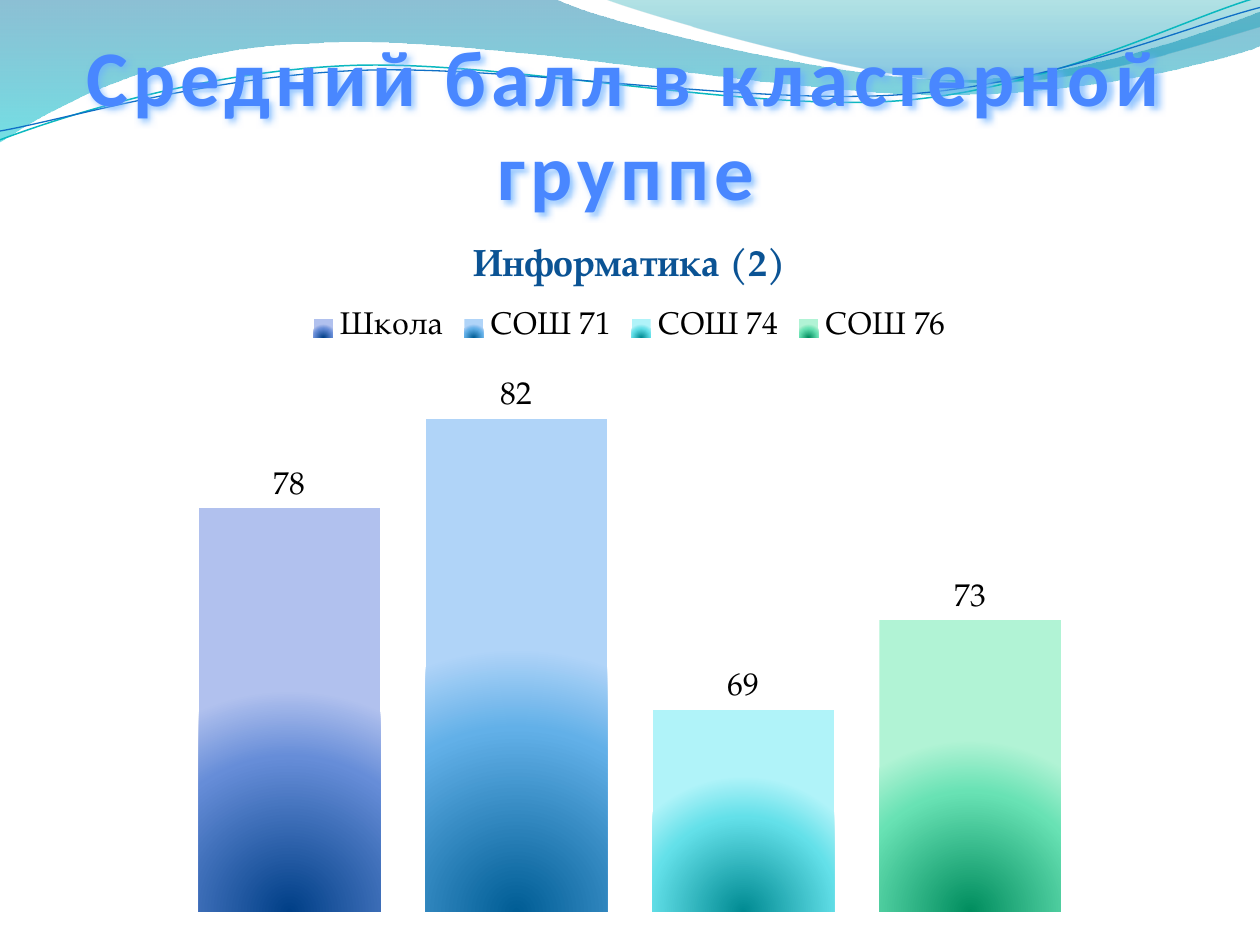
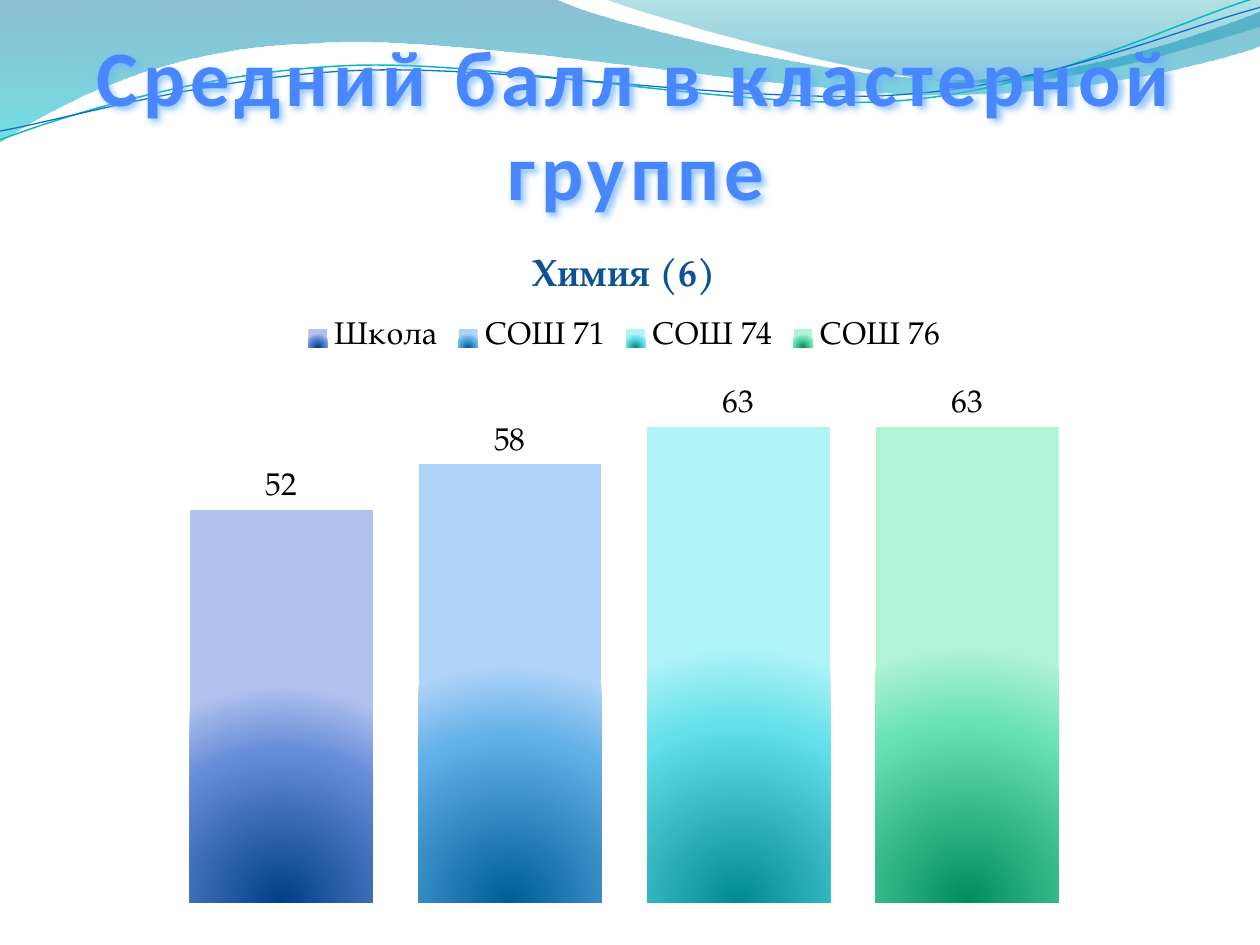
import math

from lxml import etree
from pptx import Presentation
from pptx.chart.data import CategoryChartData
from pptx.dml.color import RGBColor
from pptx.enum import chart as charts, text
from pptx.oxml import ns, parse_xml
from pptx.util import Inches, Pt

TITLE_BLUE = RGBColor(0x49, 0x87, 0xFF)
TITLE_NAVY = RGBColor(0x00, 0x53, 0x9E)
TITLE_OUTLINE = RGBColor(0xF4, 0xF5, 0xFA)
TITLE_SHADOW = RGBColor(0x6A, 0xB0, 0xFF)
CHART_TITLE = RGBColor(0x0B, 0x53, 0x94)
BLACK = RGBColor(0, 0, 0)
TEAL_LINE = RGBColor(0x0A, 0xB8, 0xBF)
BLUE_LINE = RGBColor(0x0F, 0x6F, 0xC6)
WAVE_BLUE = RGBColor(0x00, 0x74, 0xA1)
WAVE_CYAN = RGBColor(0x00, 0xC6, 0xCF)
CREST_TEAL = RGBColor(0x00, 0xA1, 0xA9)
CREST_BLUE = RGBColor(0x00, 0x8B, 0xBF)

TITLE_FONT = "Calibri"
CHART_FONT = "TeX Gyre Pagella"
TITLE = "Средний балл в кластерной группе"

SCHOOLS = {
    "Школа": (RGBColor(0x00, 0x3F, 0x87), RGBColor(0x66, 0x8D, 0xD8), RGBColor(0xB1, 0xC1, 0xEE)),
    "СОШ 71": (RGBColor(0x00, 0x5D, 0x95), RGBColor(0x62, 0xB0, 0xE8), RGBColor(0xB0, 0xD4, 0xF8)),
    "СОШ 74": (RGBColor(0x00, 0x8A, 0x92), RGBColor(0x63, 0xE0, 0xE9), RGBColor(0xB0, 0xF3, 0xF9)),
    "СОШ 76": (RGBColor(0x00, 0x8D, 0x5E), RGBColor(0x68, 0xE2, 0xB4), RGBColor(0xB1, 0xF3, 0xD5)),
}

WAVE = [
    [(0, 0)], [(4.4, -0.01)],
    [(4.76, 0.17), (6.64, 0.63), (7.58, 0.63)],
    [(8.53, 0.63), (9.58, 0.26), (10, 0.09)],
    [(10.01, 0.36)],
    [(9.83, 0.44), (8.7, 0.76), (7.46, 0.75)],
    [(6.22, 0.75), (3.82, 0.28), (2.57, 0.34)],
    [(1.29, 0.36), (0.46, 0.83), (-0.01, 1.13)],
    [(0, 0)],
]
CREST = [
    [(4.79, -0.01)],
    [(5.09, 0.11), (6.82, 0.62), (7.69, 0.65)],
    [(8.56, 0.69), (9.61, 0.32), (10, 0.21)],
    [(10, 0)],
    [(4.79, -0.01)],
]
TEAL_CURVE = [
    [(0, 1.11)],
    [(0.48, 0.93), (1.58, 0.57), (2.77, 0.52)],
    [(3.95, 0.47), (5.93, 0.89), (7.13, 0.8)],
    [(8.33, 0.71), (9.38, 0.15), (9.98, -0.02)],
]
BLUE_CURVE = [
    [(0, 1.04)],
    [(0.47, 0.96), (1.64, 0.61), (2.83, 0.56)],
    [(4.03, 0.51), (5.97, 0.84), (7.17, 0.75)],
    [(8.36, 0.67), (9.41, 0.21), (10, 0.06)],
]
CURVE_TILT = -2.7
VERTICAL = '<a:lin ang="5400000" scaled="0"/>'
FROM_BASE = '<a:path path="circle"><a:fillToRect l="50000" t="100000" r="50000"/></a:path>'


def gradient(stops, direction):
    marks = "".join(
        f'<a:gs pos="{position * 1000}"><a:srgbClr val="{color}">'
        f'<a:alpha val="{opacity * 1000}"/></a:srgbClr></a:gs>'
        for position, color, opacity in stops
    )
    return parse_xml(
        f'<a:gradFill {ns.nsdecls("a")} rotWithShape="1">'
        f"<a:gsLst>{marks}</a:gsLst>{direction}</a:gradFill>"
    )


def swap(old, new):
    old.getparent().replace(old, new)


def turn(segments, center, degrees):
    cos, sin = math.cos(math.radians(degrees)), math.sin(math.radians(degrees))
    cx, cy = center
    return [
        [
            (cx + (x - cx) * cos - (y - cy) * sin, cy + (x - cx) * sin + (y - cy) * cos)
            for x, y in segment
        ]
        for segment in segments
    ]


def draw_outline(page, segments, closed):
    points = [(Inches(x), Inches(y)) for segment in segments for x, y in segment]
    builder = page.shapes.build_freeform(*points[0])
    builder.add_line_segments(points[1:], close=closed)
    shape = builder.convert_to_shape()
    shape.shadow.inherit = False
    shape.fill.background()
    lines = iter(shape.element.xpath(".//a:path/a:lnTo"))
    for segment in segments[1:]:
        parts = [next(lines) for _ in segment]
        if len(parts) == 3:
            bend = etree.Element(ns.qn("a:cubicBezTo"))
            parts[0].addprevious(bend)
            for part in parts:
                bend.append(part[0])
                part.getparent().remove(part)
    return shape


def add_band(page, segments, stops):
    band = draw_outline(page, segments, True)
    band.line.fill.background()
    swap(band.element.spPr.find(ns.qn("a:noFill")), gradient(stops, VERTICAL))
    return band


def add_curve(page, segments, center, color, width):
    curve = draw_outline(page, turn(segments, center, -CURVE_TILT), False)
    curve.rotation = CURVE_TILT
    curve.line.color.rgb = color
    curve.line.width = Pt(width)
    return curve


def decorate_layout(layout, page):
    waves = [
        add_band(page, WAVE, [(0, WAVE_BLUE, 45), (100, WAVE_CYAN, 55)]),
        add_band(page, CREST, [(0, CREST_TEAL, 30), (80, CREST_BLUE, 45)]),
        add_curve(page, TEAL_CURVE, (4.99, 0.58), TEAL_LINE, 0.85),
        add_curve(page, BLUE_CURVE, (5, 0.59), BLUE_LINE, 0.75),
    ]
    for order, wave in enumerate(waves):
        wave.element.nvSpPr.cNvPr.set("id", str(100 + order))
        layout.shapes.element.insert(2 + order, wave.element)


def set_title(page, left):
    box = page.shapes.title
    box.left, box.top = Inches(left), Inches(0.47)
    box.width, box.height = Inches(9), Inches(1.25)
    box.element.spPr.append(parse_xml(
        f'<a:effectLst {ns.nsdecls("a")}>'
        '<a:outerShdw blurRad="38100" dist="22860" dir="2700000" algn="tl" rotWithShape="0">'
        f'<a:srgbClr val="{TITLE_SHADOW}"><a:alpha val="70000"/></a:srgbClr>'
        "</a:outerShdw></a:effectLst>"
    ))
    frame = box.text_frame
    frame.text = TITLE
    frame.word_wrap = True
    frame.auto_size = text.MSO_AUTO_SIZE.NONE
    frame.vertical_anchor = text.MSO_ANCHOR.BOTTOM
    frame.margin_left = frame.margin_right = frame.margin_bottom = 0
    frame.margin_top = Inches(0.05)
    para = frame.paragraphs[0]
    para.alignment = text.PP_ALIGN.CENTER
    font = para.runs[0].font
    font.size = Pt(45)
    font.bold = True
    properties = box.element.xpath(".//a:r/a:rPr")[0]
    properties.set("spc", "300")
    outline = etree.SubElement(properties, ns.qn("a:ln"), w=str(Pt(0.9)))
    solid = etree.SubElement(outline, ns.qn("a:solidFill"))
    etree.SubElement(solid, ns.qn("a:srgbClr"), val=str(TITLE_OUTLINE))
    properties.append(gradient([(10, TITLE_BLUE, 100), (75, TITLE_NAVY, 100)], VERTICAL))
    font.name = TITLE_FONT


def place_plot(chart, top, height):
    layout = parse_xml(
        f'<c:layout {ns.nsdecls("c")}><c:manualLayout><c:layoutTarget val="inner"/>'
        '<c:xMode val="edge"/><c:yMode val="edge"/>'
        f'<c:x val="0.02"/><c:y val="{top}"/><c:w val="0.96"/><c:h val="{height}"/>'
        "</c:manualLayout></c:layout>"
    )
    plot_area = chart.element.xpath(".//c:plotArea")[0]
    for automatic in plot_area.findall(ns.qn("c:layout")):
        plot_area.remove(automatic)
    plot_area.insert(0, layout)


def add_score_chart(page, subject, scores, area, scale, plot_place):
    data = CategoryChartData()
    data.categories = ["1"]
    for school, score in zip(SCHOOLS, scores):
        data.add_series(school, [score])
    chart = page.shapes.add_chart(
        charts.XL_CHART_TYPE.COLUMN_CLUSTERED, *map(Inches, area), data
    ).chart
    chart.font.name = CHART_FONT
    chart.font.size = Pt(18)
    chart.font.color.rgb = BLACK

    chart.has_title = True
    heading = chart.chart_title.text_frame
    heading.text = subject
    font = heading.paragraphs[0].runs[0].font
    font.name = CHART_FONT
    font.size = Pt(21.6)
    font.bold = True
    font.color.rgb = CHART_TITLE

    chart.has_legend = True
    chart.legend.position = charts.XL_LEGEND_POSITION.TOP
    chart.legend.include_in_layout = False
    chart.category_axis.visible = False
    chart.value_axis.visible = False
    chart.value_axis.has_major_gridlines = False
    chart.value_axis.minimum_scale, chart.value_axis.maximum_scale = scale

    plot = chart.plots[0]
    plot.vary_by_categories = False
    plot.overlap = -25
    plot.gap_width = 150
    plot.has_data_labels = True
    plot.data_labels.show_value = True
    plot.data_labels.position = charts.XL_LABEL_POSITION.OUTSIDE_END
    for series in plot.series:
        series.format.fill.background()
    fills = chart.element.xpath(".//c:ser/c:spPr/a:noFill")
    for fill, (dark, middle, light) in zip(fills, SCHOOLS.values()):
        stops = [(0, dark, 100), (70, middle, 100), (100, light, 100)]
        swap(fill, gradient(stops, FROM_BASE))
    if plot_place:
        place_plot(chart, *plot_place)


def main():
    deck = Presentation()
    deck.slide_width, deck.slide_height = Inches(10), Inches(7.5)
    layout = deck.slide_layouts[5]
    results = [
        ("Информатика (2)", (78, 82, 69, 73), 0.47,
         (0.31, 1.72, 9.38, 5.63), (60, 85), (0.19, 0.79)),
        ("Химия (6)", (52, 58, 63, 63), 0.55,
         (0.23, 1.8, 9.45, 5.47), (0, 70), None),
    ]
    for number, (subject, scores, title_left, *chart_setup) in enumerate(results):
        page = deck.slides.add_slide(layout)
        if number == 0:
            decorate_layout(layout, page)
        set_title(page, title_left)
        add_score_chart(page, subject, scores, *chart_setup)
    deck.save("out.pptx")


if __name__ == "__main__":
    main()
